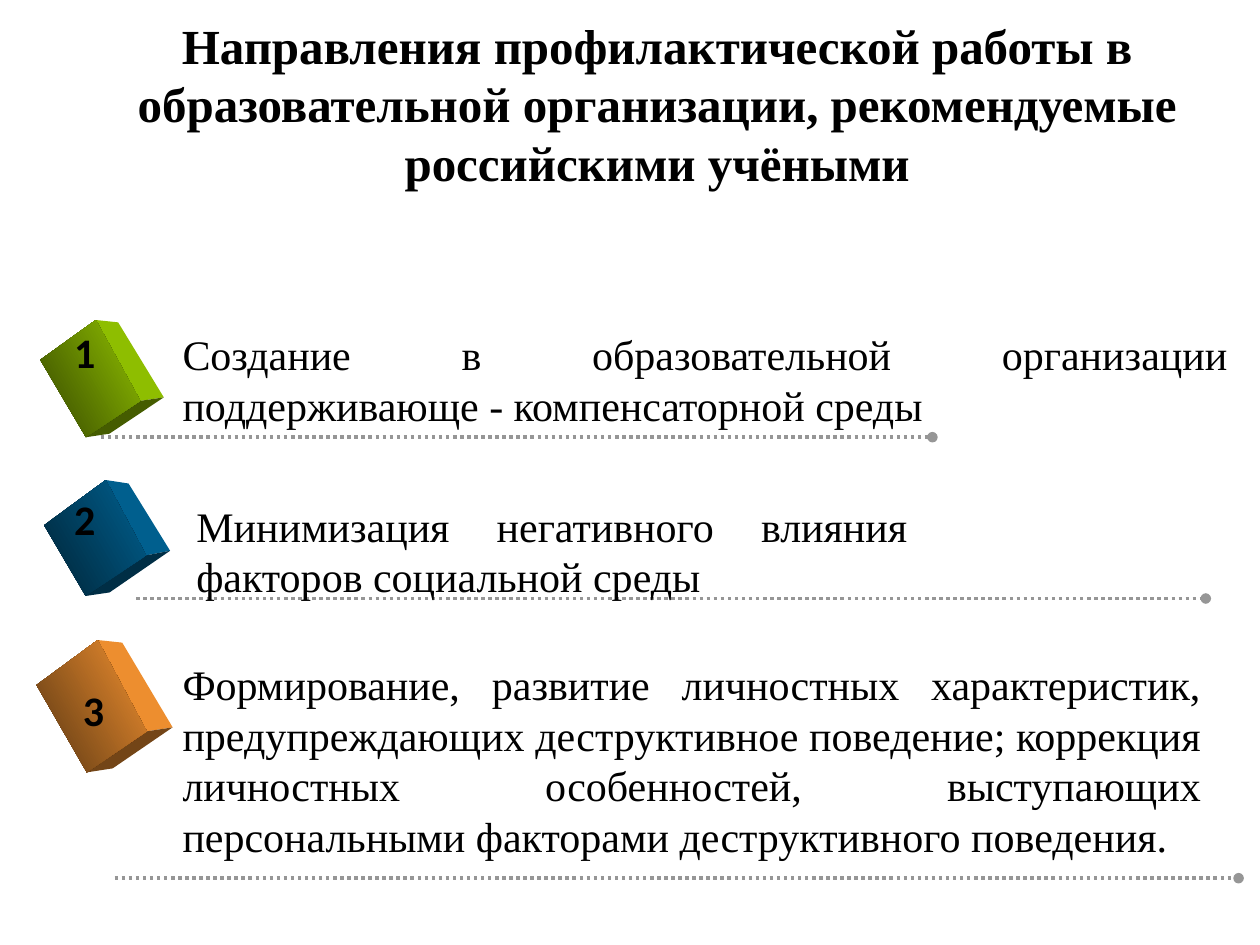
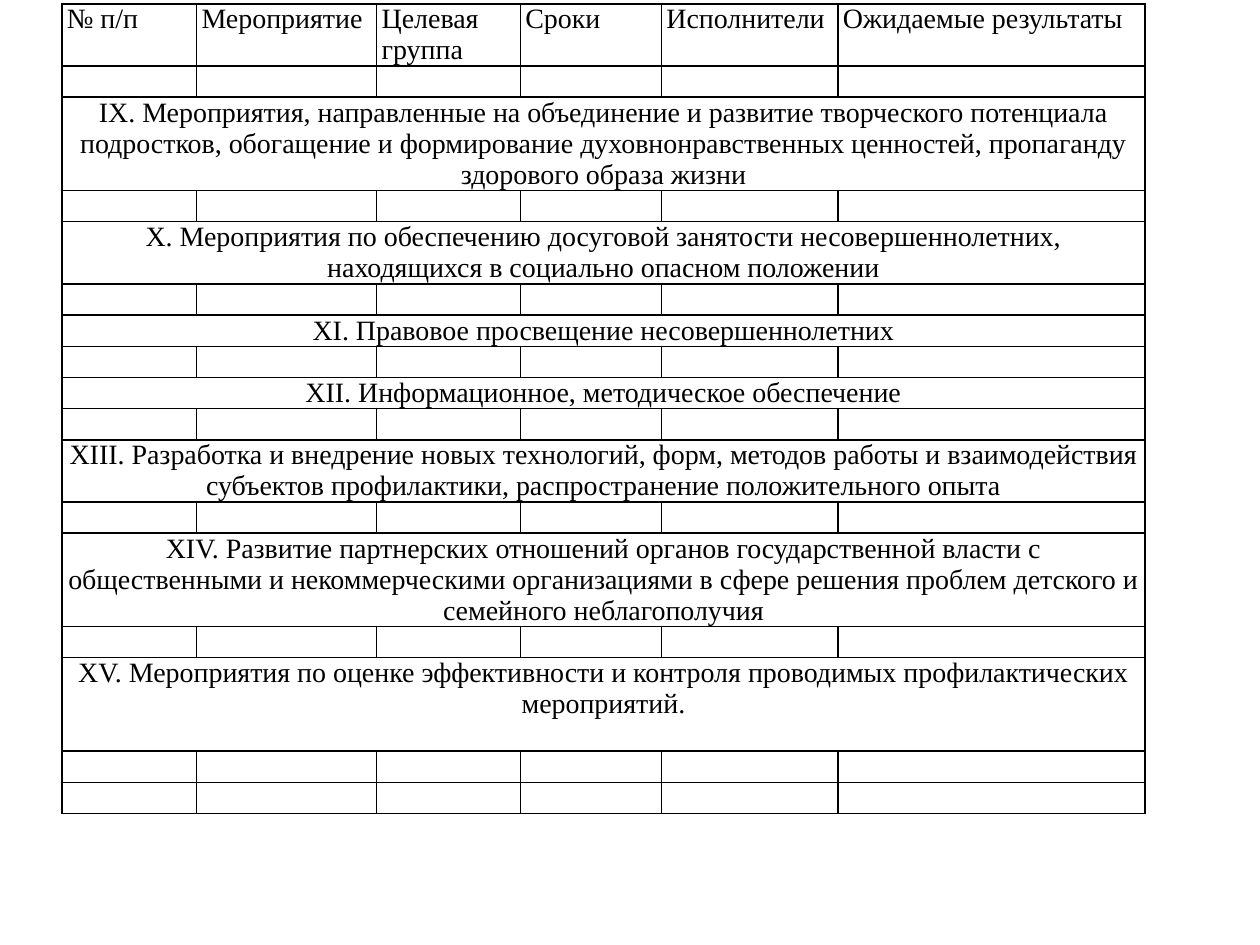
import pptx
import pptx.dml.color
import pptx.enum.dml
import pptx.enum.shapes
import pptx.enum.text
import pptx.oxml
import pptx.oxml.ns
import pptx.util
from lxml import etree

Inches = pptx.util.Inches
Pt = pptx.util.Pt
RGBColor = pptx.dml.color.RGBColor
Align = pptx.enum.text.PP_ALIGN

BLACK = RGBColor(0x00, 0x00, 0x00)
GRAY = RGBColor(0x96, 0x96, 0x96)
GREEN = RGBColor(0x99, 0xCC, 0x00)
BLUE = RGBColor(0x00, 0x66, 0x99)
ORANGE = RGBColor(0xFF, 0x99, 0x33)
SERIF = "Times New Roman"
SANS = "Calibri"

STEEP_CUBE = dict(left=(0, 0.34), top=(0.45, 0), middle=(0.81, 0.69), foot=(0.37, 1),
                  back_top=(0.63, 0.02), right=(1, 0.66), back_foot=(0.56, 0.97))
FLAT_CUBE = dict(left=(0, 0.39), top=(0.49, 0), middle=(0.81, 0.65), foot=(0.33, 1),
                 back_top=(0.67, 0.03), right=(1, 0.61), back_foot=(0.52, 0.97))
FRONT_FACE = ("left", "top", "middle", "foot")
SIDE_FACE = ("top", "back_top", "right", "middle")
BOTTOM_FACE = ("foot", "middle", "right", "back_foot")

TITLE = ("Направления профилактической работы в образовательной организации, "
         "рекомендуемые российскими учёными")

DIRECTIONS = [
    dict(number="1", colour=GREEN, cube=STEEP_CUBE, cube_box=(0.32, 2.54, 0.98, 0.93),
         number_box=(0.49, 2.54, 0.51, 0.77), line=(0.8, 7.4, 3.47),
         text_box=(1.35, 2.56, 8.49, 0.9),
         text="Создание в образовательной организации поддерживающе - "
              "компенсаторной среды"),
    dict(number="2", colour=BLUE, cube=FLAT_CUBE, cube_box=(0.35, 3.81, 1.0, 0.92),
         number_box=(0.49, 3.87, 0.72, 0.5), line=(1.08, 9.57, 4.75),
         text_box=(1.46, 3.92, 5.84, 0.91),
         text="Минимизация негативного влияния факторов социальной среды"),
    dict(number="3", colour=ORANGE, cube=STEEP_CUBE, cube_box=(0.29, 5.08, 1.08, 1.05),
         number_box=(0.56, 5.38, 0.63, 0.96), line=(0.91, 9.83, 6.97),
         text_box=(1.35, 5.18, 8.28, 2.02),
         text="Формирование, развитие личностных характеристик, предупреждающих "
              "деструктивное поведение; коррекция личностных особенностей, "
              "выступающих персональными факторами деструктивного поведения."),
]

PLAN_COLUMNS = [("№ п/п", 1.07), ("Мероприятие", 1.43), ("Целевая группа", 1.14),
                ("Сроки", 1.12), ("Исполнители", 1.4), ("Ожидаемые результаты", 2.44)]
PLAN_SECTIONS = [
    ("IX. Мероприятия, направленные на объединение и развитие творческого потенциала "
     "подростков, обогащение и формирование духовнонравственных ценностей, пропаганду "
     "здорового образа жизни", 3),
    ("X. Мероприятия по обеспечению досуговой занятости несовершеннолетних, "
     "находящихся в социально опасном положении", 2),
    ("XI. Правовое просвещение несовершеннолетних", 1),
    ("XII. Информационное, методическое обеспечение", 1),
    ("XIII. Разработка и внедрение новых технологий, форм, методов работы и "
     "взаимодействия субъектов профилактики, распространение положительного опыта", 2),
    ("XIV. Развитие партнерских отношений органов государственной власти с "
     "общественными и некоммерческими организациями в сфере решения проблем детского "
     "и семейного неблагополучия", 3),
    ("XV. Мероприятия по оценке эффективности и контроля проводимых профилактических "
     "мероприятий.", 3),
]
PLAN_LINE_HEIGHT = Pt(17.8)


def inches(*lengths):
    return [Inches(length) for length in lengths]


def shade(colour, factor):
    return RGBColor(*(round(channel * factor) for channel in colour))


def write_text(frame, text, size=24, font=SERIF, bold=False, align=Align.LEFT):
    paragraph = frame.paragraphs[0]
    paragraph.alignment = align
    run = paragraph.add_run()
    run.text = text
    run.font.size = Pt(size)
    run.font.name = font
    run.font.bold = bold
    run.font.color.rgb = BLACK


def add_text(slide, box, text, **text_format):
    frame = slide.shapes.add_textbox(*inches(*box)).text_frame
    frame.word_wrap = True
    write_text(frame, text, **text_format)


def add_title(slide, box, text):
    title = slide.shapes.title
    title.left, title.top, title.width, title.height = inches(*box)
    frame = title.text_frame
    frame.auto_size = pptx.enum.text.MSO_AUTO_SIZE.NONE
    frame.vertical_anchor = pptx.enum.text.MSO_ANCHOR.TOP
    write_text(frame, text, size=28, bold=True, align=Align.CENTER)


def add_face(slide, box, corners):
    left, top, width, height = box
    points = [inches(left + x * width, top + y * height) for x, y in corners]
    builder = slide.shapes.build_freeform(*points[0])
    builder.add_line_segments(points[1:], close=True)
    face = builder.convert_to_shape()
    face.shadow.inherit = False
    face.line.fill.background()
    return face


def add_cube(slide, box, cube, colour):
    for names, factor in ((SIDE_FACE, 0.93), (BOTTOM_FACE, 0.45)):
        face = add_face(slide, box, [cube[name] for name in names])
        face.fill.solid()
        face.fill.fore_color.rgb = shade(colour, factor)
    front = add_face(slide, box, [cube[name] for name in FRONT_FACE])
    front.fill.gradient()
    front.fill.gradient_angle = 30
    for stop, factor in zip(front.fill.gradient_stops, (0.35, 0.95)):
        stop.color.rgb = shade(colour, factor)


def add_dotted_line(slide, start, end, top):
    connector = slide.shapes.add_connector(
        pptx.enum.shapes.MSO_CONNECTOR.STRAIGHT, *inches(start, top, end, top))
    connector.line.color.rgb = GRAY
    connector.line.width = Pt(2)
    connector.line.dash_style = pptx.enum.dml.MSO_LINE.ROUND_DOT
    tail = etree.SubElement(connector.line._get_or_add_ln(), pptx.oxml.ns.qn("a:tailEnd"))
    tail.set("type", "oval")
    etree.SubElement(connector._element.spPr, pptx.oxml.ns.qn("a:effectLst"))


def add_direction(slide, direction):
    add_dotted_line(slide, *direction["line"])
    add_cube(slide, direction["cube_box"], direction["cube"], direction["colour"])
    add_text(slide, direction["number_box"], direction["number"], font=SANS, bold=True)
    add_text(slide, direction["text_box"], direction["text"], align=Align.JUSTIFY)


def add_borders(cell):
    properties = cell._tc.get_or_add_tcPr()
    for position, side in enumerate(("lnL", "lnR", "lnT", "lnB")):
        border = pptx.oxml.parse_xml(
            f'<a:{side} {pptx.oxml.ns.nsdecls("a")} w="12700"><a:solidFill>'
            f'<a:srgbClr val="{BLACK}"/></a:solidFill></a:{side}>')
        properties.insert(position, border)


def format_cell(cell):
    cell.margin_left = cell.margin_right = Inches(0.04)
    cell.margin_top = cell.margin_bottom = 0
    cell.fill.background()
    add_borders(cell)
    end = etree.SubElement(cell.text_frame.paragraphs[0]._p, pptx.oxml.ns.qn("a:endParaRPr"))
    end.set("sz", "1600")
    etree.SubElement(end, pptx.oxml.ns.qn("a:latin")).set("typeface", SERIF)


def add_plan_table(slide, left, top):
    line_counts = [2, 1]
    for _, lines in PLAN_SECTIONS:
        line_counts += [lines, 1]
    line_counts.append(1)
    width = Inches(sum(column_width for _, column_width in PLAN_COLUMNS))
    height = sum(line_counts) * PLAN_LINE_HEIGHT
    table = slide.shapes.add_table(
        len(line_counts), len(PLAN_COLUMNS), *inches(left, top), width, height).table
    table.first_row = table.horz_banding = False
    for row, lines in zip(table.rows, line_counts):
        row.height = lines * PLAN_LINE_HEIGHT
    for cell in table.iter_cells():
        format_cell(cell)
    for index, (heading, column_width) in enumerate(PLAN_COLUMNS):
        table.columns[index].width = Inches(column_width)
        write_text(table.cell(0, index).text_frame, heading, size=16)
    for index, (section, _) in enumerate(PLAN_SECTIONS):
        row = 2 + 2 * index
        cell = table.cell(row, 0)
        cell.merge(table.cell(row, len(PLAN_COLUMNS) - 1))
        write_text(cell.text_frame, section, size=16, align=Align.CENTER)


def build_directions_slide(presentation):
    slide = presentation.slides.add_slide(presentation.slide_layouts[5])
    add_title(slide, (0.79, 0.07, 8.85, 1.51), TITLE)
    for direction in DIRECTIONS:
        add_direction(slide, direction)


def build_plan_slide(presentation):
    slide = presentation.slides.add_slide(presentation.slide_layouts[6])
    add_plan_table(slide, 0.49, 0.03)


def main():
    presentation = pptx.Presentation()
    presentation.slide_width, presentation.slide_height = inches(10, 7.5)
    build_directions_slide(presentation)
    build_plan_slide(presentation)
    presentation.save("out.pptx")


if __name__ == "__main__":
    main()
